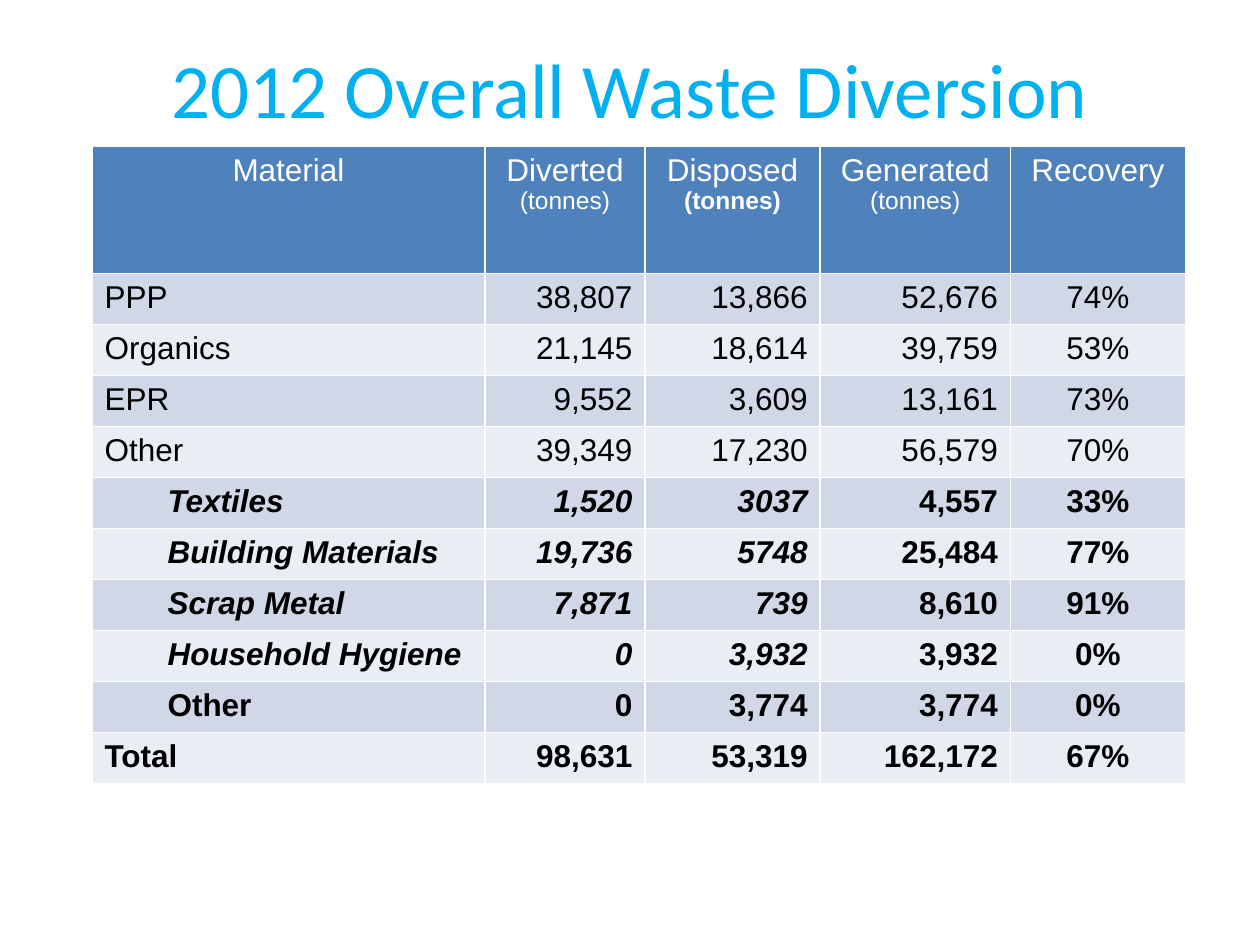
from pptx import Presentation
from pptx import util as u
from pptx.dml.color import RGBColor
from pptx.enum import text

LEFT, MID, RIGHT = text.PP_ALIGN.LEFT, text.PP_ALIGN.CENTER, text.PP_ALIGN.RIGHT
HEADS = [("Material",), ("Diverted", "(tonnes)"), ("Disposed", "(tonnes)"),
         ("Generated", "(tonnes)"), ("Recovery",)]
# Each row: style, then its cells
ROWS = [
    ("plain", "PPP", "38,807", "13,866", "52,676", "74%"),
    ("plain", "Organics", "21,145", "18,614", "39,759", "53%"),
    ("plain", "EPR", "9,552", "3,609", "13,161", "73%"),
    ("plain", "Other", "39,349", "17,230", "56,579", "70%"),
    ("part", "Textiles", "1,520", "3037", "4,557", "33%"),
    ("part", "Building Materials", "19,736", "5748", "25,484", "77%"),
    ("part", "Scrap Metal", "7,871", "739", "8,610", "91%"),
    ("part", "Household Hygiene", "0", "3,932", "3,932", "0%"),
    ("rest", "Other", "0", "3,774", "3,774", "0%"),
    ("total", "Total", "98,631", "53,319", "162,172", "67%"),
]
WIDTHS = [3.12, 1.27, 1.39, 1.51, 1.39]
ALIGNS = [LEFT, RIGHT, RIGHT, RIGHT, MID]
BANDS = ["D0D8E8", "E9EDF4"]


def paint(fill, color):
    fill.solid()
    fill.fore_color.rgb = RGBColor.from_string(color)


def style(para, align, size, color, name="Arial", bold=False, italic=False):
    para.alignment = align
    font = para.font
    font.name, font.size = name, u.Pt(size)
    font.bold, font.italic = bold, italic
    paint(font.fill, color)


def indent(para):
    para.level = 1
    props = para._p.get_or_add_pPr()
    props.set("marL", str(u.Inches(0.5)))
    props.set("indent", "0")


def add_title(slide):
    title = slide.shapes.title
    title.left, title.top = u.Inches(0.28), u.Inches(0.21)
    title.width, title.height = u.Inches(9.44), u.Inches(0.98)
    frame = title.text_frame
    frame.text = "2012 Overall Waste Diversion"
    frame.vertical_anchor = text.MSO_ANCHOR.MIDDLE
    style(frame.paragraphs[0], MID, 44, "00B0F0", "Calibri")


def fill_head(table):
    for col, lines in enumerate(HEADS):
        cell = table.cell(0, col)
        cell.text = "\n".join(lines)
        paint(cell.fill, "4F81BD")
        for num, para in enumerate(cell.text_frame.paragraphs):
            unit = num > 0
            style(para, MID, 14 if unit else 18, "FFFFFF",
                  bold=unit and lines[0] == "Disposed")


def fill_row(table, row, kind, values):
    for col, value in enumerate(values):
        cell = table.cell(row, col)
        cell.text = value
        paint(cell.fill, BANDS[(row - 1) % 2])
        para = cell.text_frame.paragraphs[0]
        if col == 0 and kind in ("part", "rest"):
            indent(para)
        style(para, ALIGNS[col], 18, "000000", bold=kind != "plain",
              italic=kind == "part" and col < 3)


def add_grid(slide):
    table = slide.shapes.add_table(
        len(ROWS) + 1, len(WIDTHS), u.Inches(0.73), u.Inches(1.16),
        u.Inches(sum(WIDTHS)), u.Inches(5.06)).table
    for col, width in zip(table.columns, WIDTHS):
        col.width = u.Inches(width)
    for num, row in enumerate(table.rows):
        row.height = u.Inches(0.405 if num else 1.01)
    fill_head(table)
    for num, (kind, *values) in enumerate(ROWS, 1):
        fill_row(table, num, kind, values)


def main():
    deck = Presentation()
    deck.slide_width, deck.slide_height = u.Inches(10), u.Inches(7.5)
    slide = deck.slides.add_slide(deck.slide_layouts[5])
    add_title(slide)
    add_grid(slide)
    deck.save("out.pptx")


if __name__ == "__main__":
    main()
